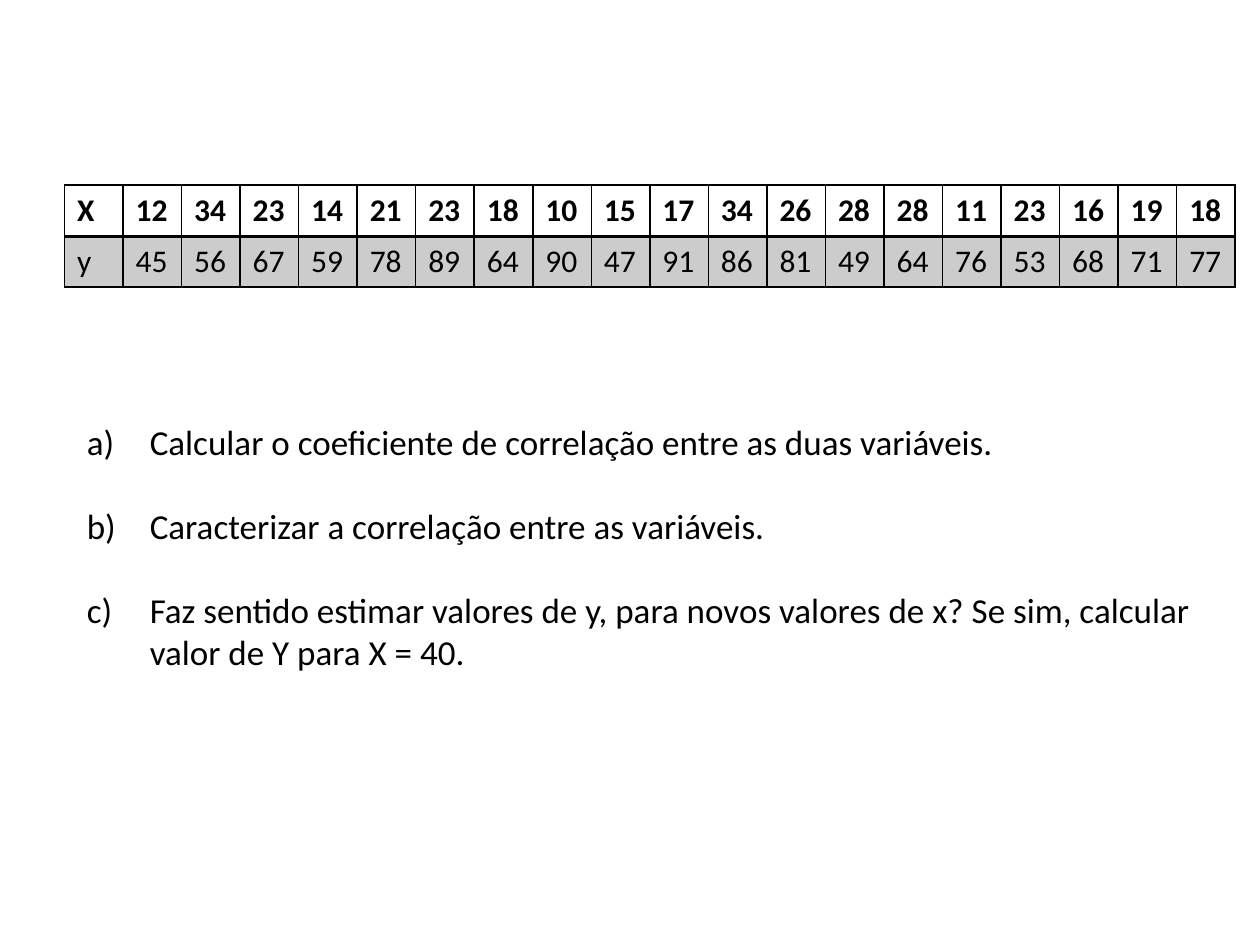
from dataclasses import dataclass
from typing import Any

from lxml import etree
from pptx import Presentation
from pptx import util as u
from pptx.dml.color import RGBColor
from pptx.enum import text as t
from pptx.oxml import ns

HUES = {"ink": "000000"}
FACE = "Calibri"


@dataclass
class Row:
    name: str
    vals: list[int]
    bold: bool
    shade: bool
    edges: dict[str, float]


ROWS = [
    Row("X", [12, 34, 23, 14, 21, 23, 18, 10, 15, 17,
              34, 26, 28, 28, 11, 23, 16, 19, 18],
        True, False, {"L": 1, "R": 1, "T": 1, "B": 2}),
    Row("y", [45, 56, 67, 59, 78, 89, 64, 90, 47, 91,
              86, 81, 49, 64, 76, 53, 68, 71, 77],
        False, True, {"L": 1, "R": 1, "T": 2, "B": 1}),
]
TASKS = [
    "Calcular o coeficiente de correlação entre as duas variáveis.",
    "Caracterizar a correlação entre as variáveis.",
    "Faz sentido estimar valores de y, para novos valores de x? "
    "Se sim, calcular valor de Y para X = 40.",
]


def put(obj: Any, vals: dict[str, Any]) -> None:
    for key, val in vals.items():
        setattr(obj, key, val)


def sub(node: Any, tag: str, **atts: str) -> Any:
    return etree.SubElement(node, ns.qn(tag), **atts)


def write(par: Any, words: str, size: float, bold: bool = False) -> None:
    run = par.add_run()
    run.text = words
    put(run.font, {"name": FACE, "size": u.Pt(size), "bold": bold})
    run.font.color.rgb = RGBColor.from_string(HUES["ink"])


def edge(cell: Any, edges: dict[str, float]) -> None:
    """Set border widths in points; borders must come before the fill."""
    props = cell._tc.get_or_add_tcPr()
    for spot, (side, wide) in enumerate(edges.items()):
        line = etree.Element(ns.qn(f"a:ln{side}"), w=str(u.Pt(wide)))
        sub(sub(line, "a:solidFill"), "a:srgbClr", val=HUES["ink"])
        props.insert(spot, line)


def tint(cell: Any, shade: bool) -> None:
    """Fill with ink at 20 % opacity, or leave the cell clear."""
    if not shade:
        cell.fill.background()
        return
    cell.fill.solid()
    cell.fill.fore_color.rgb = RGBColor.from_string(HUES["ink"])
    hue = cell._tc.tcPr.find(".//" + ns.qn("a:srgbClr"))
    sub(hue, "a:alpha", val="20000")


def draw_grid(slide: Any, rows: list[Row]) -> None:
    count = len(rows[0].vals) + 1
    wide, high = u.Cm(1.18), u.Cm(1.03)
    grid = slide.shapes.add_table(
        len(rows), count, u.Cm(1.3), u.Cm(3.73),
        wide * count, high * len(rows)).table
    put(grid, {"first_row": False, "horz_banding": False})
    for col in grid.columns:
        col.width = wide
    for r, row in enumerate(rows):
        grid.rows[r].height = high
        for c, val in enumerate([row.name, *row.vals]):
            cell = grid.cell(r, c)
            write(cell.text_frame.paragraphs[0], str(val), 18, row.bold)
            tint(cell, row.shade)
            edge(cell, row.edges)


def draw_tasks(slide: Any, tasks: list[str]) -> None:
    box = slide.shapes.add_textbox(u.Cm(1.5), u.Cm(8.36), u.Cm(22.8), u.Cm(5.38))
    frame = box.text_frame
    put(frame, {"word_wrap": True, "auto_size": t.MSO_AUTO_SIZE.SHAPE_TO_FIT_TEXT})
    dent = u.Cm(1.27)
    for i, task in enumerate(tasks):
        par = frame.add_paragraph() if i else frame.paragraphs[0]
        write(par, task, 20)
        if i:
            par.space_before = u.Pt(24)
        props = par._p.get_or_add_pPr()
        props.set("marL", str(dent))
        props.set("indent", str(-dent))
        sub(props, "a:buFont", typeface="+mj-lt")
        sub(props, "a:buAutoNum", type="alphaLcParenR")


def main() -> None:
    deck = Presentation()
    put(deck, {"slide_width": u.Cm(25.4), "slide_height": u.Cm(19.05)})
    slide = deck.slides.add_slide(deck.slide_layouts[6])
    draw_grid(slide, ROWS)
    draw_tasks(slide, TASKS)
    deck.save("out.pptx")


if __name__ == "__main__":
    main()
